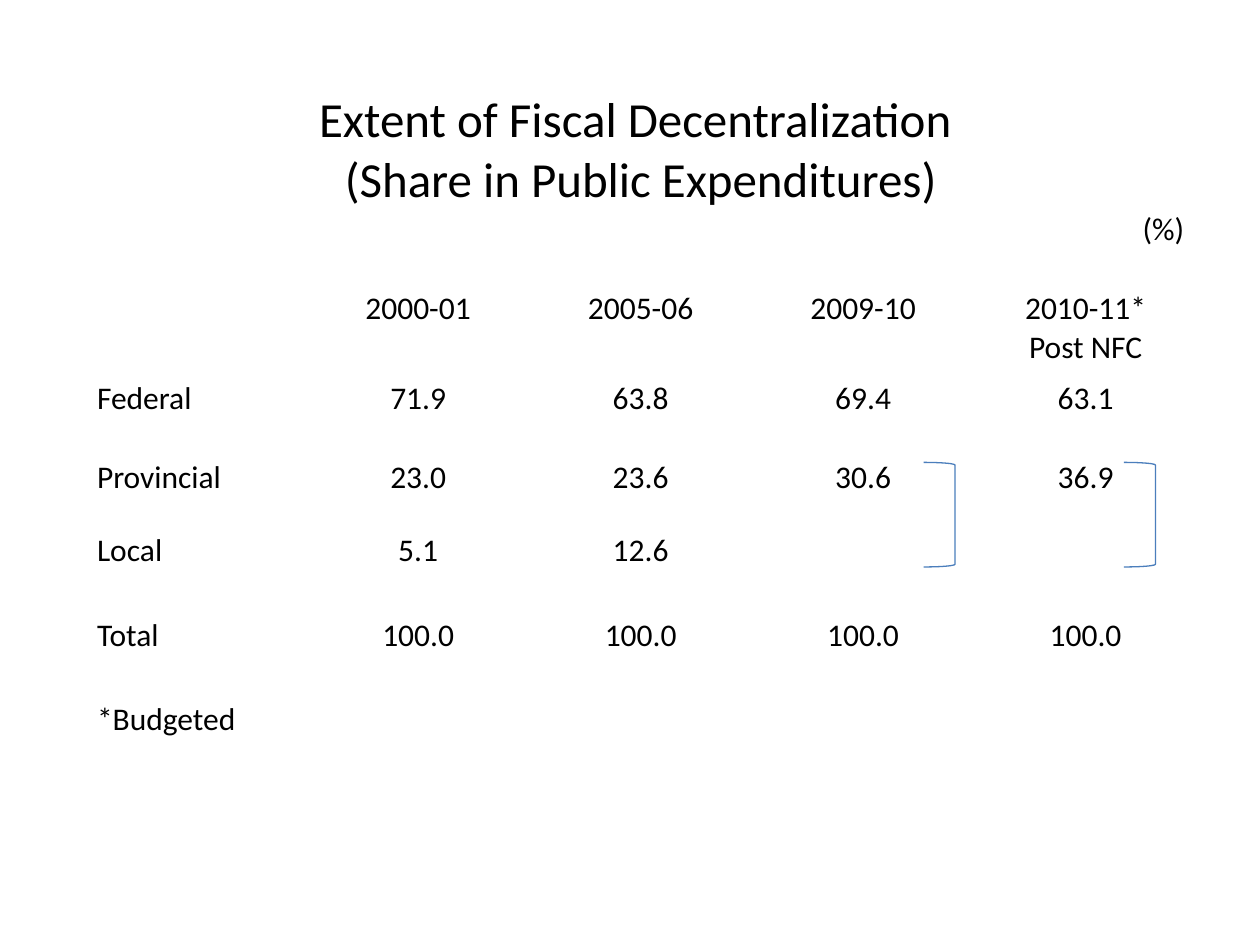
from pptx import Presentation
from pptx.dml.color import RGBColor
from pptx.enum.shapes import MSO_SHAPE
from pptx.enum.text import PP_ALIGN
from pptx.util import Inches, Pt

LEFT, CENTER, RIGHT = PP_ALIGN.LEFT, PP_ALIGN.CENTER, PP_ALIGN.RIGHT
RIGHT_BRACKET = MSO_SHAPE.RIGHT_BRACKET
BLANK_LAYOUT = 6

BLACK = RGBColor(0x00, 0x00, 0x00)
BLUE = RGBColor(0x4B, 0x7E, 0xBC)

BODY_FORMAT = {"name": "Calibri", "size": Pt(18), "bold": False}
TITLE_FORMAT = {**BODY_FORMAT, "size": Pt(28)}

TITLE_LINES = [
    ("Extent of Fiscal Decentralization ", CENTER, TITLE_FORMAT),
    ("(Share in Public Expenditures)", CENTER, TITLE_FORMAT),
    ("(%)", RIGHT, BODY_FORMAT),
]
SHARES = [
    ["", "2000-01", "2005-06", "2009-10", "2010-11*\nPost NFC"],
    ["Federal", "71.9", "63.8", "69.4", "63.1"],
    ["Provincial", "23.0", "23.6", "30.6", "36.9"],
    ["Local", "5.1", "12.6", "", ""],
    ["Total", "100.0", "100.0", "100.0", "100.0"],
]
FOOTNOTE = "*Budgeted"
ROW_HEIGHTS = [1.58, 0.58, 0.63, 0.58, 0.67, 0.67, 0.97]


def fill_cell(cell, lines):
    for index, (text, alignment, font_format) in enumerate(lines):
        frame = cell.text_frame
        paragraph = frame.add_paragraph() if index else frame.paragraphs[0]
        paragraph.alignment = alignment
        run = paragraph.add_run()
        run.text = text
        for name, value in font_format.items():
            setattr(run.font, name, value)
        run.font.color.rgb = BLACK


def add_share_table(slide, left, top, width):
    column_count = len(SHARES[0])
    frame = slide.shapes.add_table(
        len(ROW_HEIGHTS), column_count,
        Inches(left), Inches(top), Inches(width), Inches(sum(ROW_HEIGHTS)))
    table = frame.table
    table.first_row = table.horz_banding = False
    for column in table.columns:
        column.width = Inches(width / column_count)
    for row, height in zip(table.rows, ROW_HEIGHTS):
        row.height = Inches(height)
    for cell in table.iter_cells():
        cell.fill.background()
        cell.text_frame.paragraphs[0].font.size = BODY_FORMAT["size"]

    last_row = len(ROW_HEIGHTS) - 1
    for row_index in (0, last_row):
        table.cell(row_index, 0).merge(table.cell(row_index, column_count - 1))
    fill_cell(table.cell(0, 0), TITLE_LINES)
    fill_cell(table.cell(last_row, 0), [(FOOTNOTE, LEFT, BODY_FORMAT)])

    for row_index, values in enumerate(SHARES, start=1):
        for column_index, value in enumerate(values):
            alignment = CENTER if column_index else LEFT
            if value:
                fill_cell(table.cell(row_index, column_index),
                          [(line, alignment, BODY_FORMAT) for line in value.split("\n")])


def add_bracket(slide, left, top, width, height):
    bracket = slide.shapes.add_shape(
        RIGHT_BRACKET, Inches(left), Inches(top), Inches(width), Inches(height))
    bracket.shadow.inherit = False
    bracket.fill.background()
    bracket.line.color.rgb = BLUE
    bracket.line.width = Pt(0.75)


def main():
    presentation = Presentation()
    presentation.slide_width = Inches(10)
    presentation.slide_height = Inches(7.5)
    slide = presentation.slides.add_slide(presentation.slide_layouts[BLANK_LAYOUT])
    add_share_table(slide, 0.67, 0.67, 8.83)
    for left in (8.92, 7.33):
        add_bracket(slide, left, 3.67, 0.25, 0.83)
    presentation.save("out.pptx")


if __name__ == "__main__":
    main()
